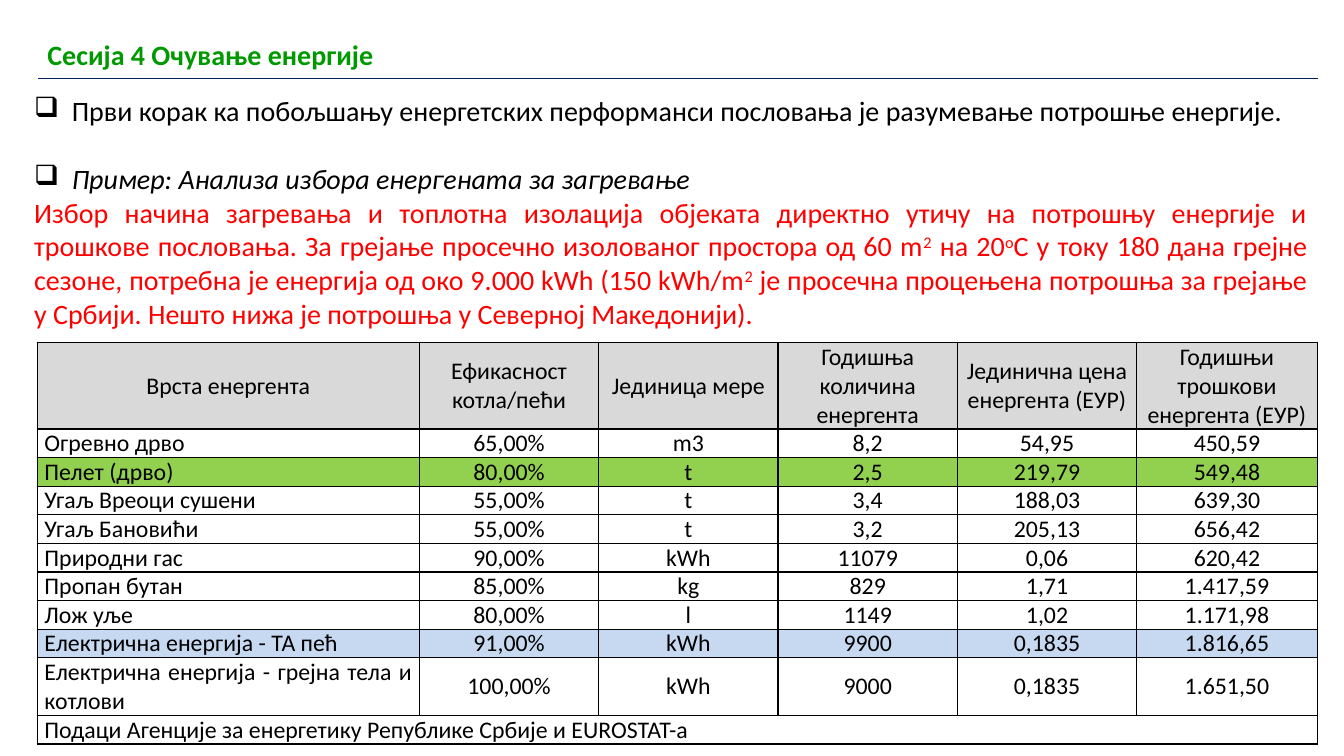
import pptx
import pptx.dml.color
import pptx.enum.text
import pptx.oxml.ns
import pptx.util
from lxml import etree

Cm = pptx.util.Cm
ALIGN = pptx.enum.text.PP_ALIGN
ANCHOR = pptx.enum.text.MSO_ANCHOR
SIDES = ("lnL", "lnR", "lnT", "lnB")
TABLE_LEFT = Cm(0.94)

HEADINGS = [
    "Врста енергента", "Ефикасност котла/пећи", "Јединица мере",
    "Годишња количина енергента", "Јединична цена енергента (ЕУР)",
    "Годишњи трошкови енергента (ЕУР)",
]
FUELS = [
    ("Огревно дрво", "65,00%", "m3", "8,2", "54,95", "450,59"),
    ("Пелет (дрво)", "80,00%", "t", "2,5", "219,79", "549,48"),
    ("Угаљ Вреоци сушени", "55,00%", "t", "3,4", "188,03", "639,30"),
    ("Угаљ Бановићи", "55,00%", "t", "3,2", "205,13", "656,42"),
    ("Природни гас", "90,00%", "kWh", "11079", "0,06", "620,42"),
    ("Пропан бутан", "85,00%", "kg", "829", "1,71", "1.417,59"),
    ("Лож уље", "80,00%", "l", "1149", "1,02", "1.171,98"),
    ("Електрична енергија - ТА пећ", "91,00%", "kWh", "9900", "0,1835", "1.816,65"),
    ("Електрична енергија - грејна тела и котлови", "100,00%", "kWh", "9000",
     "0,1835", "1.651,50"),
]
SOURCE_NOTE = "Подаци Агенције за енергетику Републике Србије и EUROSTAT-а"
ROW_FILLS = {0: "D9D9D9", 2: "92D050", 8: "C6D9F1"}
HEATING_TEXT = [
    ("Избор начина загревања и топлотна изолација објеката директно утичу на "
     "потрошњу енергије и трошкове пословања. За грејање просечно изолованог "
     "простора од 60 m", False),
    ("2", True),
    (" на 20", False),
    ("о", True),
    ("C у току 180 дана грејне сезоне, потребна је енергија од око 9.000 kWh "
     "(150 kWh/m", False),
    ("2", True),
    (" је просечна процењена потрошња за грејање у Србији. Нешто нижа је "
     "потрошња у Северној Македонији).", False),
]


def color(value):
    """Return the colour for a hex string."""
    return pptx.dml.color.RGBColor.from_string(value)


def add_child(parent, tag, **attributes):
    """Append a DrawingML element to a parent."""
    return etree.SubElement(parent, pptx.oxml.ns.qn("a:" + tag), **attributes)


def add_span(para, text, size=20, ink="000000", bold=False, italic=False, raised=False):
    """Add formatted text to a paragraph."""
    span = para.add_run()
    span.text = text
    span.font.name = "Calibri"
    span.font.size = pptx.util.Pt(size)
    span.font.bold = bold
    span.font.italic = italic
    span.font.color.rgb = color(ink)
    if raised:
        span._r.get_or_add_rPr().set("baseline", "30000")


def add_bullet(para):
    """Give a paragraph a box bullet with a hanging indent."""
    properties = para._p.get_or_add_pPr()
    properties.set("marL", str(Cm(0.95)))
    properties.set("indent", str(-Cm(0.95)))
    add_child(properties, "buChar", char="❑")


def style_cell(cell, borders, fill=None):
    """Set the borders and the fill of a cell."""
    properties = cell._tc.get_or_add_tcPr()
    for side, ink in zip(SIDES, borders):
        line = add_child(properties, side, w=str(pptx.util.Pt(1)))
        add_child(add_child(line, "solidFill"), "srgbClr", val=ink)
    if fill:
        cell.fill.solid()
        cell.fill.fore_color.rgb = color(fill)
    else:
        cell.fill.background()


def add_grid(page, top, widths, heights):
    """Add a plain table with the given column widths and row heights."""
    frame = page.shapes.add_table(
        len(heights), len(widths), TABLE_LEFT, top, sum(widths), sum(heights))
    grid = frame.table
    grid.first_row = False
    grid.horz_banding = False
    for column, width in zip(grid.columns, widths):
        column.width = width
    for row, height in zip(grid.rows, heights):
        row.height = height
    return grid


def add_title(page):
    """Add the underlined session title."""
    cell = add_grid(page, Cm(0.85), [Cm(32.28)], [Cm(1.1)]).cell(0, 0)
    add_span(cell.text_frame.paragraphs[0], "Сесија 4 Очување енергије",
             ink="009900", bold=True)
    style_cell(cell, ["FFFFFF"] * 3 + ["002060"])


def add_introduction(page):
    """Add the bulleted statements and the heating example."""
    box = page.shapes.add_textbox(Cm(0.61), Cm(2.24), Cm(32.59), Cm(6.25))
    frame = box.text_frame
    frame.word_wrap = True
    step, example, heating = (
        frame.paragraphs[0], frame.add_paragraph(), frame.add_paragraph())
    for para in (step, example, heating):
        para.alignment = ALIGN.JUSTIFY
    example.space_before = pptx.util.Pt(24.4)
    add_bullet(step)
    add_bullet(example)
    add_span(step, "Први корак ка побољшању енергетских перформанси пословања "
                   "је разумевање потрошње енергије.")
    add_span(example, "Пример: Анализа избора енергената за загревање", italic=True)
    for text, raised in HEATING_TEXT:
        add_span(heating, text, ink="FF0000", raised=raised)


def add_fuel_table(page):
    """Add the comparison of fuels with its source note."""
    widths = [Cm(9.63)] + [Cm(4.52)] * 4 + [Cm(4.55)]
    heights = [Cm(2.17)] + [Cm(0.72)] * 8 + [Cm(1.45), Cm(0.72)]
    grid = add_grid(page, Cm(8.64), widths, heights)
    note_row = len(heights) - 1
    grid.cell(note_row, 0).merge(grid.cell(note_row, len(widths) - 1))
    for r, values in enumerate([HEADINGS, *FUELS, [SOURCE_NOTE]]):
        for c in range(len(widths)):
            cell = grid.cell(r, c)
            cell.margin_left = cell.margin_right = Cm(0.18)
            cell.margin_top = cell.margin_bottom = 0
            cell.vertical_anchor = ANCHOR.MIDDLE
            style_cell(cell, ["000000"] * 4, ROW_FILLS.get(r))
            if c < len(values):
                para = cell.text_frame.paragraphs[0]
                para.alignment = ALIGN.JUSTIFY if r and not c else ALIGN.CENTER
                add_span(para, values[c], size=17)


def main():
    """Build and save the slide."""
    deck = pptx.Presentation()
    deck.slide_width = Cm(33.87)
    deck.slide_height = Cm(19.05)
    page = deck.slides.add_slide(deck.slide_layouts[6])
    add_title(page)
    add_introduction(page)
    add_fuel_table(page)
    deck.save("out.pptx")


if __name__ == "__main__":
    main()
